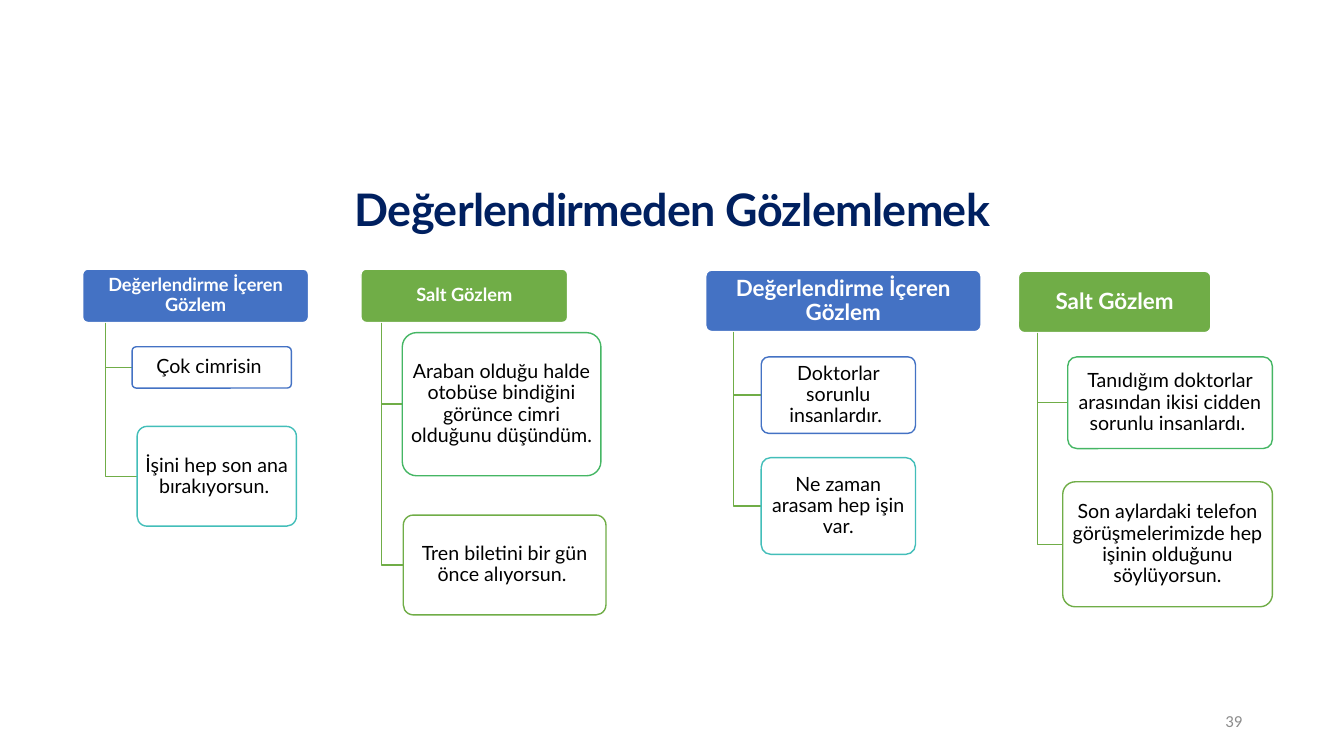
from dataclasses import dataclass

from pptx import Presentation
from pptx.dml.color import RGBColor
from pptx.enum.shapes import MSO_SHAPE
from pptx.enum.text import MSO_ANCHOR, PP_ALIGN
from pptx.util import Inches, Pt

ROUNDED = MSO_SHAPE.ROUNDED_RECTANGLE
MIDDLE = MSO_ANCHOR.MIDDLE
CENTER, RIGHT = PP_ALIGN.CENTER, PP_ALIGN.RIGHT


@dataclass(frozen=True)
class Theme:
    navy: str = "002060"
    blue: str = "4472C4"
    green: str = "70AD47"
    teal: str = "43BEB9"
    mint: str = "45B664"
    white: str = "FFFFFF"
    black: str = "000000"
    gray: str = "8C8C8C"
    title_size: int = 32
    large_header_size: int = 16
    header_size: int = 13
    card_size: int = 14
    number_size: int = 12
    font: str = "Lato"
    number_font: str = "Calibri"


THEME = Theme()


def write(shape, text, size, color, bold=False, align=CENTER, font=THEME.font, spacing=0.9):
    """Fill a shape with one vertically centred paragraph."""
    frame = shape.text_frame
    frame.word_wrap = True
    frame.vertical_anchor = MIDDLE
    paragraph = frame.paragraphs[0]
    paragraph.text = text
    paragraph.alignment = align
    paragraph.line_spacing = spacing
    paragraph.font.name = font
    paragraph.font.size = Pt(size)
    paragraph.font.bold = bold
    paragraph.font.color.rgb = RGBColor.from_string(color)
    return paragraph


def add_box(box, text, size, color, fill, line, bold=False):
    """Add a rounded box with text, placed by (left, top, width, height) in inches."""
    shape = slide.shapes.add_shape(ROUNDED, *map(Inches, box))
    shape.adjustments[0] = 0.1
    shape.shadow.inherit = False
    shape.fill.solid()
    shape.fill.fore_color.rgb = RGBColor.from_string(fill)
    shape.line.color.rgb = RGBColor.from_string(line)
    shape.line.width = Pt(1)
    frame = shape.text_frame
    frame.margin_left = frame.margin_right = Inches(0.03)
    frame.margin_top = frame.margin_bottom = Inches(0.02)
    write(shape, text, size, color, bold)


presentation = Presentation()
presentation.slide_width = Inches(13.33)
presentation.slide_height = Inches(7.5)
slide = presentation.slides.add_slide(presentation.slide_layouts[6])

title = slide.shapes.add_textbox(Inches(0.92), Inches(1.38), Inches(11.5), Inches(1.45))
heading = write(title, "Değerlendirmeden Gözlemlemek", THEME.title_size, THEME.navy, bold=True)
heading.runs[0]._r.get_or_add_rPr().set("spc", "-50")

slide_number = slide.shapes.add_textbox(Inches(9.42), Inches(6.95), Inches(3), Inches(0.4))
write(slide_number, "39", THEME.number_size, THEME.gray, align=RIGHT,
      font=THEME.number_font, spacing=1.0)

# Each branch: header box, header text, header size, header fill, cards (box, outline, text)
branches = [
    ((0.82, 2.67, 2.24, 0.53), "Değerlendirme İçeren Gözlem", THEME.header_size, THEME.blue, [
        ((1.31, 3.44, 1.58, 0.41), THEME.blue, "Çok cimrisin "),
        ((1.36, 4.23, 1.58, 0.99), THEME.teal, "İşini hep son ana bırakıyorsun. "),
    ]),
    ((3.58, 2.67, 2.05, 0.53), "Salt Gözlem", THEME.header_size, THEME.green, [
        ((3.99, 3.3, 1.97, 1.42), THEME.mint,
         "Araban olduğu halde otobüse bindiğini görünce cimri olduğunu düşündüm."),
        ((4, 5.11, 2.01, 0.99), THEME.green, "Tren biletini bir gün önce alıyorsun. "),
    ]),
    ((7, 2.68, 2.73, 0.61), "Değerlendirme İçeren Gözlem", THEME.large_header_size, THEME.blue, [
        ((7.55, 3.54, 1.53, 0.76), THEME.blue, "Doktorlar sorunlu insanlardır. "),
        ((7.55, 4.54, 1.53, 0.96), THEME.teal, "Ne zaman arasam hep işin var."),
    ]),
    ((10.1, 2.69, 1.91, 0.61), "Salt Gözlem", THEME.large_header_size, THEME.green, [
        ((10.59, 3.54, 2.03, 0.91), THEME.mint,
         "Tanıdığım doktorlar arasından ikisi cidden sorunlu insanlardı. "),
        ((10.54, 4.78, 2.08, 1.24), THEME.green,
         "Son aylardaki telefon görüşmelerimizde hep işinin olduğunu söylüyorsun."),
    ]),
]

for header_box, header, header_size, header_fill, cards in branches:
    add_box(header_box, header, header_size, THEME.white, header_fill, THEME.white, bold=True)
    left, top, width, height = header_box
    stem_x, stem_top = Inches(left + width / 10), Inches(top + height)
    for card_box, outline, text in cards:
        card_left, card_top, _, card_height = card_box
        card_middle = Inches(card_top + card_height / 2)
        builder = slide.shapes.build_freeform(stem_x, stem_top)
        builder.add_line_segments(
            [(stem_x, card_middle), (Inches(card_left), card_middle)], close=False)
        elbow = builder.convert_to_shape()
        elbow.shadow.inherit = False
        elbow.fill.background()
        elbow.line.color.rgb = RGBColor.from_string(THEME.green)
        elbow.line.width = Pt(1)
        add_box(card_box, text, THEME.card_size, THEME.black, THEME.white, outline)

presentation.save("out.pptx")
